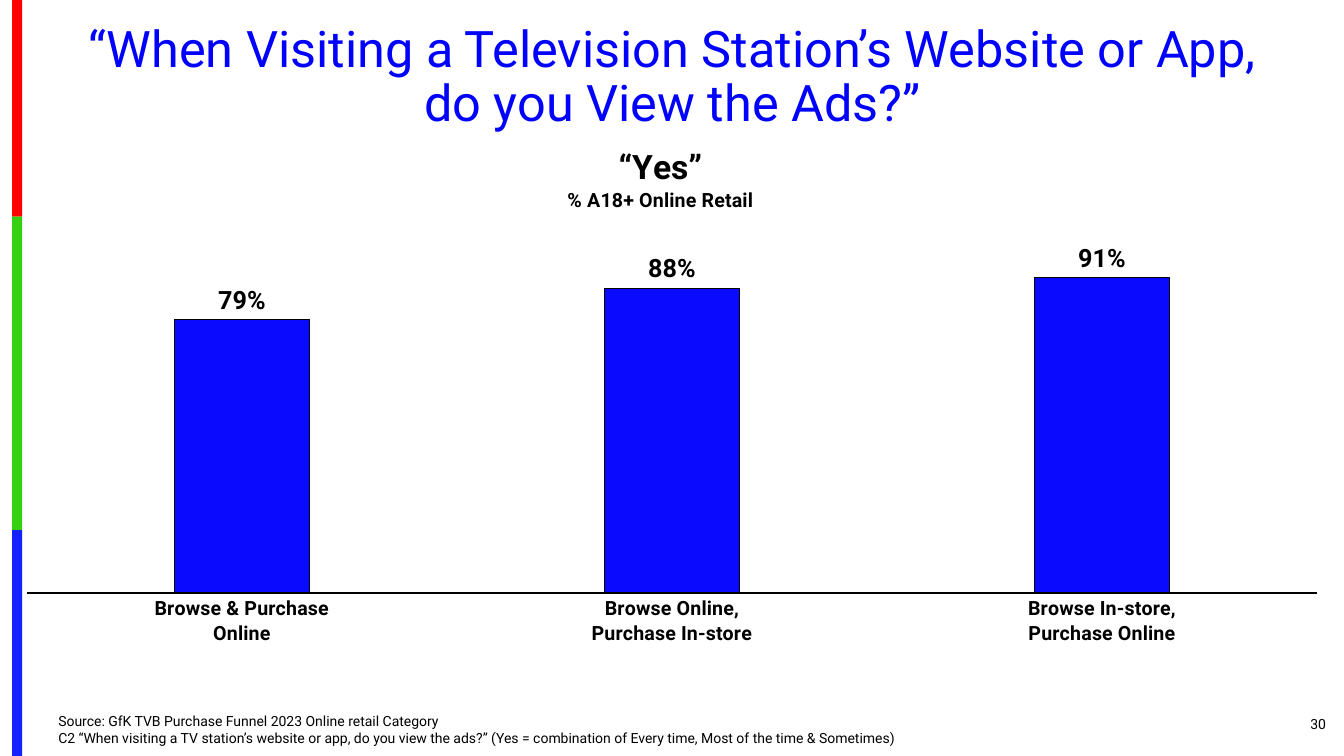
from pptx import Presentation
from pptx.chart.data import CategoryChartData
from pptx.dml.color import RGBColor as Color
from pptx.enum.chart import XL_CHART_TYPE as ChartType, XL_LABEL_POSITION as LabelPosition, XL_TICK_MARK as TickMark
from pptx.enum.shapes import MSO_SHAPE as Preset
from pptx.enum.text import MSO_ANCHOR as Anchor, PP_ALIGN as Align
from pptx.oxml import parse_xml
from pptx.oxml.ns import nsdecls
from pptx.util import Inches, Pt

TITLE = "“When Visiting a Television Station’s Website or App, do you View the Ads?”"
SOURCE = (
    "Source: GfK TVB Purchase Funnel 2023 Online retail Category\n"
    "C2 “When visiting a TV station’s website or app, do you view the ads?” "
    "(Yes = combination of Every time, Most of the time & Sometimes)"
)
PAGE_NUMBER = "30"
CHART_TITLE = [("“Yes”", "heading"), ("% A18+ Online Retail", "category")]
ANSWERS = {
    "Browse & Purchase\nOnline": 0.79,
    "Browse Online,\nPurchase In-store": 0.88,
    "Browse In-store,\nPurchase Online": 0.91,
}
STRIPES = [("red", 2.15), ("green", 3.11), ("blue", 2.24)]

THEME = {
    "font": "Roboto",
    "colors": {
        "title": Color.from_string("0000FF"),
        "text": Color.from_string("000000"),
        "bar": Color.from_string("0A0AFF"),
        "red": Color.from_string("FE0000"),
        "green": Color.from_string("36CF12"),
        "blue": Color.from_string("1322FE"),
    },
    "sizes": {"title": 36, "heading": 24, "value": 18, "category": 14, "note": 10},
}


def set_all(target, values):
    for name, value in values.items():
        setattr(target, name, value)


def style_font(font, size, color="text", bold=False):
    set_all(font, {"name": THEME["font"], "size": Pt(THEME["sizes"][size]), "bold": bold})
    font.color.rgb = THEME["colors"][color]


def write_text(box, text, size, color, anchor, align, spacing=1.0):
    set_all(box.text_frame, {"word_wrap": True, "vertical_anchor": anchor})
    para = box.text_frame.paragraphs[0]
    para.text = text
    set_all(para, {"alignment": align, "line_spacing": spacing})
    for span in para.runs:
        style_font(span.font, size, color)


def add_stripes(page):
    top = 0
    for color, height in STRIPES:
        stripe = page.shapes.add_shape(
            Preset.RECTANGLE, Inches(0.12), Inches(top), Inches(0.1), Inches(height))
        stripe.shadow.inherit = False
        stripe.fill.solid()
        stripe.fill.fore_color.rgb = THEME["colors"][color]
        stripe.line.fill.background()
        top += height


def place(element, index, **fractions):
    for old in element.xpath("c:layout"):
        element.remove(old)
    modes = "".join(f'<c:{side}Mode val="edge"/>' for side in "xy")
    sizes = "".join(f'<c:{name} val="{value}"/>' for name, value in fractions.items())
    target = '<c:layoutTarget val="inner"/>' if "w" in fractions else ""
    element.insert(index, parse_xml(
        f'<c:layout {nsdecls("c")}><c:manualLayout>{target}{modes}{sizes}</c:manualLayout></c:layout>'))


def outline(line):
    line.color.rgb = THEME["colors"]["text"]
    line.width = Pt(0.75)


def add_answer_chart(page):
    data = CategoryChartData(number_format="0%")
    data.categories = list(ANSWERS)
    data.add_series("Series 1", list(ANSWERS.values()))
    chart = page.shapes.add_chart(
        ChartType.COLUMN_CLUSTERED, 0, Inches(1.37), Inches(13.33), Inches(5.13), data).chart
    style_font(chart.font, "note")
    set_all(chart, {"has_legend": False, "has_title": True})

    frame = chart.chart_title.text_frame
    for index, (text, size) in enumerate(CHART_TITLE):
        para = frame.add_paragraph() if index else frame.paragraphs[0]
        span = para.add_run()
        span.text = text
        style_font(span.font, size, bold=True)
    place(chart.chart_title.element, 1, x=0.42, y=0.01)
    place(chart.element.xpath("c:chart/c:plotArea")[0], 0, x=0.02, y=0.21, w=0.96, h=0.67)

    set_all(chart.value_axis, {
        "minimum_scale": 0, "maximum_scale": 1, "has_major_gridlines": False, "visible": False})
    axis = chart.category_axis
    set_all(axis, {"major_tick_mark": TickMark.NONE, "minor_tick_mark": TickMark.NONE})
    style_font(axis.tick_labels.font, "category", bold=True)
    outline(axis.format.line)

    plot = chart.plots[0]
    set_all(plot, {
        "gap_width": 219, "overlap": -27, "vary_by_categories": False, "has_data_labels": True})
    set_all(plot.data_labels, {
        "show_value": True, "number_format": "0%", "number_format_is_linked": False,
        "position": LabelPosition.OUTSIDE_END})
    style_font(plot.data_labels.font, "value", bold=True)
    bars = plot.series[0].format
    bars.fill.solid()
    bars.fill.fore_color.rgb = THEME["colors"]["bar"]
    outline(bars.line)


def main():
    """Build the slide on how many online shoppers view station ads."""
    deck = Presentation()
    set_all(deck, {"slide_width": Inches(13.33), "slide_height": Inches(7.5)})
    page = deck.slides.add_slide(deck.slide_layouts[5])
    add_stripes(page)
    title = page.shapes.title
    set_all(title, {
        "left": Inches(0.46), "top": Inches(0.18), "width": Inches(12.42), "height": Inches(1.19)})
    write_text(title, TITLE, "title", "title", Anchor.MIDDLE, Align.CENTER, 0.9)
    add_answer_chart(page)
    number = page.shapes.add_textbox(Inches(12.17), Inches(6.98), Inches(1.08), Inches(0.4))
    write_text(number, PAGE_NUMBER, "note", "text", Anchor.MIDDLE, Align.RIGHT)
    source = page.shapes.add_textbox(Inches(0.48), Inches(7.01), Inches(10.21), Inches(0.44))
    write_text(source, SOURCE, "note", "text", Anchor.BOTTOM, Align.LEFT)
    deck.save("out.pptx")


if __name__ == "__main__":
    main()
